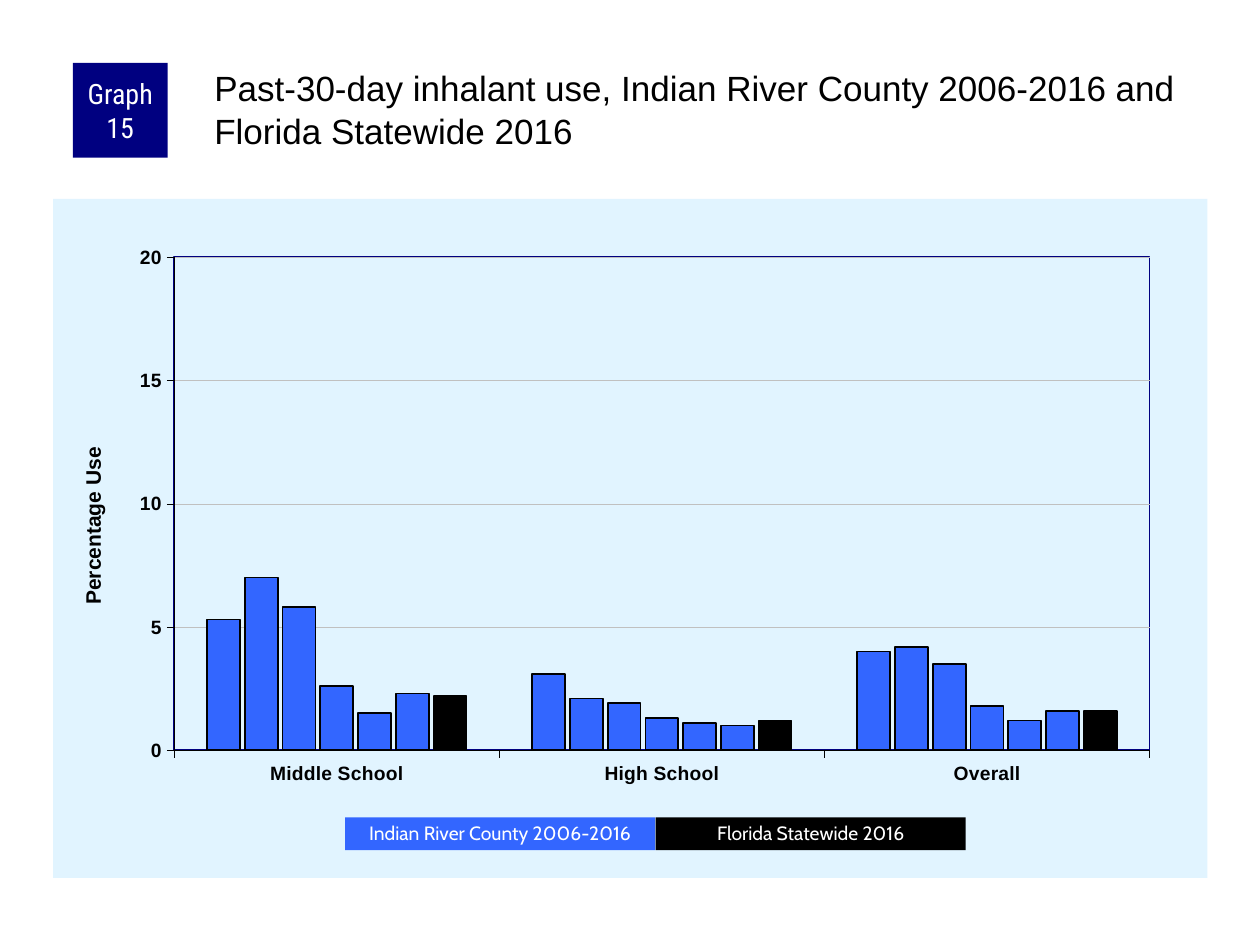
"""Build a slide with a clustered column chart of past-30-day inhalant use."""
from typing import NamedTuple

from lxml.etree import _Element as Node
from pptx import Presentation
from pptx.chart.data import CategoryChartData as Data
from pptx.dml.color import RGBColor as Rgb
from pptx.enum.chart import XL_CHART_TYPE as Kind, XL_TICK_MARK as Tick
from pptx.enum.shapes import MSO_SHAPE as Geo
from pptx.enum.text import MSO_ANCHOR as Anchor, MSO_AUTO_SIZE as Fit, PP_ALIGN as Align
from pptx.oxml import parse_xml
from pptx.oxml.ns import nsdecls, qn
from pptx.util import Cm, Pt

HUES = {"navy": "000080", "blue": "3366FF", "black": "000000",
        "white": "FFFFFF", "pale": "E1F4FF", "grid": "C0C0C0"}
GROUPS = ["Middle School", "High School", "Overall"]
RATES = [(5.3, 3.1, 4), (7, 2.1, 4.2), (5.8, 1.9, 3.5), (2.6, 1.3, 1.8),
         (1.5, 1.1, 1.2), (2.3, 1, 1.6), (2.2, 1.2, 1.6)]


class Box(NamedTuple):
    left: float
    top: float
    width: float
    height: float
    hue: str
    text: str
    face: str
    size: int
    pad: float
    lead: float


BOXES = [
    Box(1.47, 1.27, 1.91, 1.91, "navy", "Graph 15", "Roboto Condensed", 16, 0.13, 1),
    Box(6.96, 16.48, 6.25, 0.66, "blue", "Indian River County 2006-2016", "Cabin", 11, 0.25, 0.9),
    Box(13.22, 16.48, 6.25, 0.66, "black", "Florida Statewide 2016", "Cabin", 11, 0.25, 0.9),
]


def tint(name: str) -> Rgb:
    return Rgb.from_string(HUES[name])


def style(font, face: str, size: float, hue: str, bold: bool = False) -> None:
    font.name, font.size, font.bold = face, Pt(size), bold
    font.color.rgb = tint(hue)


def stroke(line, hue: str, width: float) -> None:
    line.color.rgb, line.width = tint(hue), Pt(width)


def draw_box(slide, box: Box) -> None:
    shape = slide.shapes.add_shape(
        Geo.RECTANGLE, *(Cm(n) for n in box[:4]))
    shape.shadow.inherit = False
    shape.fill.solid()
    shape.fill.fore_color.rgb = tint(box.hue)
    shape.line.fill.background()
    frame = shape.text_frame
    frame.word_wrap, frame.vertical_anchor = True, Anchor.MIDDLE
    frame.margin_left = frame.margin_right = Cm(box.pad)
    frame.margin_top = frame.margin_bottom = 0
    frame.text = box.text
    para = frame.paragraphs[0]
    para.alignment, para.line_spacing = Align.CENTER, box.lead
    style(para.runs[0].font, box.face, box.size, "white")


def set_title(slide) -> None:
    title = slide.shapes.title
    title.left, title.top, title.width, title.height = Cm(4.24), Cm(1.27), Cm(20.12), Cm(2.11)
    frame = title.text_frame
    frame.text = ("Past-30-day inhalant use, Indian River County 2006-2016 "
                  "and Florida Statewide 2016")
    frame.word_wrap, frame.auto_size = True, Fit.NONE
    frame.vertical_anchor = Anchor.TOP
    frame.margin_left = frame.margin_top = Cm(0.08)
    frame.margin_right = frame.margin_bottom = 0
    para = frame.paragraphs[0]
    para.alignment = Align.LEFT
    style(para.runs[0].font, "Arial", 20, "black")


def place(node: Node, index: int, spots: dict[str, float], inner: bool = False) -> None:
    old = node.find(qn("c:layout"))
    if old is not None:
        node.remove(old)
    parts = '<c:layoutTarget val="inner"/>' if inner else ""
    parts += "".join(f'<c:{side}Mode val="edge"/>' for side in "xy")
    parts += "".join(f'<c:{key} val="{val}"/>' for key, val in spots.items())
    node.insert(index, parse_xml(
        f'<c:layout {nsdecls("c")}><c:manualLayout>{parts}</c:manualLayout></c:layout>'))


def look(fill: str, line: str) -> Node:
    return parse_xml(f'<c:spPr {nsdecls("c", "a")}>{fill}{line}</c:spPr>')


def solid(hue: str) -> str:
    return f'<a:solidFill><a:srgbClr val="{HUES[hue]}"/></a:solidFill>'


def set_axes(chart) -> None:
    for axis in (chart.category_axis, chart.value_axis):
        axis.major_tick_mark, axis.minor_tick_mark = Tick.OUTSIDE, Tick.NONE
        style(axis.tick_labels.font, "Arial", 11, "black", True)
        stroke(axis.format.line, "black", 0.25)
    axis = chart.value_axis
    axis.minimum_scale, axis.maximum_scale, axis.major_unit = 0, 20, 5
    axis.has_major_gridlines = True
    stroke(axis.major_gridlines.format.line, "grid", 0.25)
    title = axis.axis_title
    frame = title.text_frame
    frame.text = "Percentage Use"
    style(frame.paragraphs[0].runs[0].font, "Arial", 12, "black", True)
    frame._txBody.bodyPr.set("rot", "-5400000")
    place(title._element, 1, {"x": 0.02, "y": 0.36})


def draw_chart(slide) -> None:
    data = Data()
    data.categories = GROUPS
    for num, rates in enumerate(RATES, 1):
        data.add_series(f"Series {num}", rates)
    chart = slide.shapes.add_chart(
        Kind.COLUMN_CLUSTERED, Cm(1.07), Cm(4.01), Cm(23.27), Cm(13.69), data).chart
    chart.has_legend = chart.has_title = False
    style(chart.font, "Arial", 8, "black")
    plot = chart.plots[0]
    plot.vary_by_categories, plot.gap_width, plot.overlap = False, 200, -15
    for num, row in enumerate(plot.series, 1):
        row.format.fill.solid()
        row.format.fill.fore_color.rgb = tint("black" if num == len(RATES) else "blue")
        stroke(row.format.line, "black", 1)
    set_axes(chart)
    root = chart._chartSpace
    area = root.chart.plotArea
    place(area, 0, {"x": 0.105, "y": 0.086, "w": 0.845, "h": 0.726}, True)
    area.append(look("<a:noFill/>", f'<a:ln w="{Pt(1)}">{solid("navy")}</a:ln>'))
    root.chart.addnext(look(solid("pale"), "<a:ln><a:noFill/></a:ln>"))


def main() -> None:
    deck = Presentation()
    deck.slide_width, deck.slide_height = Cm(25.4), Cm(19.05)
    slide = deck.slides.add_slide(deck.slide_layouts[5])
    set_title(slide)
    draw_chart(slide)
    for box in BOXES:
        draw_box(slide, box)
    deck.save("out.pptx")


if __name__ == "__main__":
    main()
